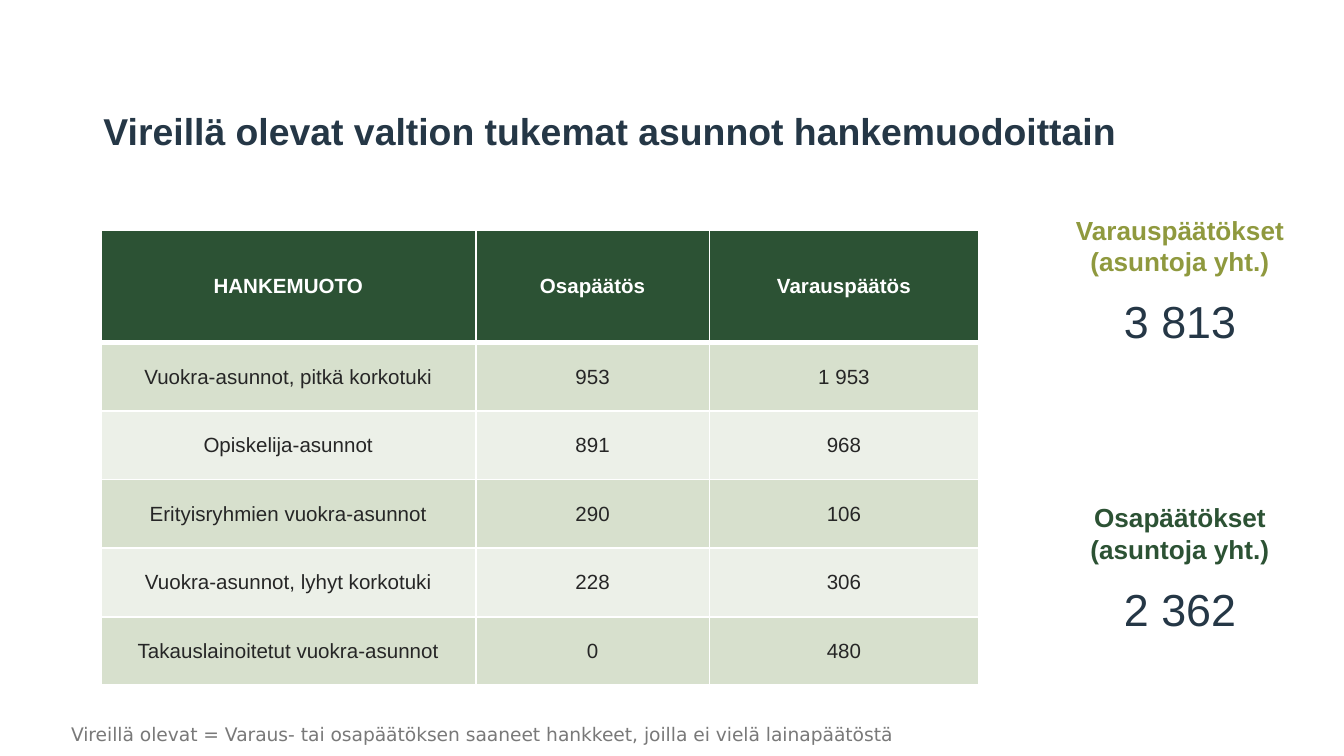
from dataclasses import dataclass

from lxml.etree import SubElement
from pptx import Presentation
from pptx.dml.color import RGBColor
from pptx.enum.text import MSO_ANCHOR as Anchor, MSO_AUTO_SIZE as AutoSize, PP_ALIGN as Align
from pptx.oxml.ns import qn
from pptx.util import Inches, Pt


@dataclass(frozen=True)
class Theme:
    """Colours, fonts and type sizes of the slide."""
    white: str = "FFFFFF"
    green: str = "2C5234"
    olive: str = "8F993E"
    navy: str = "253746"
    ink: str = "262626"
    grey: str = "797979"
    bands: tuple = ("D7E0CD", "ECF0E8")
    font: str = "Arial"
    note_font: str = "DejaVu Sans"
    title_size: int = 20
    table_size: int = 11
    label_size: int = 14
    figure_size: int = 24
    note_size: int = 10


THEME = Theme()
COLUMN_WIDTHS = (2.79, 1.74, 2)
HEADER_HEIGHT, ROW_HEIGHT = 0.84, 0.51
ROWS = (
    ("HANKEMUOTO", "Osapäätös", "Varauspäätös"),
    ("Vuokra-asunnot, pitkä korkotuki", "953", "1 953"),
    ("Opiskelija-asunnot", "891", "968"),
    ("Erityisryhmien vuokra-asunnot", "290", "106"),
    ("Vuokra-asunnot, lyhyt korkotuki", "228", "306"),
    ("Takauslainoitetut vuokra-asunnot", "0", "480"),
)
TOTALS = (
    ("Varauspäätökset", "3 813", THEME.olive, 1.54),
    ("Osapäätökset", "2 362", THEME.green, 3.68),
)


def style_runs(paragraph, size, color, bold=False, font=THEME.font):
    """Format every run of a paragraph."""
    for run in paragraph.runs:
        run.font.name = font
        run.font.size = Pt(size)
        run.font.bold = bold
        run.font.color.rgb = RGBColor.from_string(color)


def set_borders(cell, **widths):
    """Draw white cell borders, with widths in points by side letter."""
    properties = cell._tc.get_or_add_tcPr()
    for side, width in widths.items():
        line = SubElement(properties, qn(f"a:ln{side}"), w=str(Pt(width)))
        fill = SubElement(line, qn("a:solidFill"))
        SubElement(fill, qn("a:srgbClr"), val=THEME.white)


def add_title(slide, text):
    """Place and format the title placeholder."""
    title = slide.shapes.title
    title.left, title.top, title.width, title.height = map(Inches, (0.67, 0.78, 9.33, 0.38))
    text_frame = title.text_frame
    text_frame.text = text
    text_frame.vertical_anchor = Anchor.MIDDLE
    paragraph = text_frame.paragraphs[0]
    paragraph.alignment = Align.LEFT
    style_runs(paragraph, THEME.title_size, THEME.navy, bold=True)


def add_project_table(slide):
    """Add the banded table of project types."""
    height = HEADER_HEIGHT + ROW_HEIGHT * (len(ROWS) - 1)
    table = slide.shapes.add_table(
        len(ROWS), len(COLUMN_WIDTHS),
        Inches(0.75), Inches(1.71), Inches(sum(COLUMN_WIDTHS)), Inches(height),
    ).table
    for column, width in zip(table.columns, COLUMN_WIDTHS):
        column.width = Inches(width)
    for row_index, texts in enumerate(ROWS):
        header = row_index == 0
        table.rows[row_index].height = Inches(HEADER_HEIGHT if header else ROW_HEIGHT)
        fill = THEME.green if header else THEME.bands[(row_index - 1) % 2]
        for column_index, text in enumerate(texts):
            cell = table.cell(row_index, column_index)
            cell.text = text
            cell.vertical_anchor = Anchor.MIDDLE
            set_borders(cell, L=1, R=1, T=3 if row_index == 1 else 1, B=3 if header else 1)
            cell.fill.solid()
            cell.fill.fore_color.rgb = RGBColor.from_string(fill)
            paragraph = cell.text_frame.paragraphs[0]
            paragraph.alignment = Align.CENTER
            style_runs(paragraph, THEME.table_size, THEME.white if header else THEME.ink, header)


def add_text(slide, text, left, top, width, height):
    """Add a wrapping text box and return its text frame."""
    box = slide.shapes.add_textbox(*map(Inches, (left, top, width, height)))
    text_frame = box.text_frame
    text_frame.text = text
    text_frame.word_wrap = True
    text_frame.auto_size = AutoSize.SHAPE_TO_FIT_TEXT
    return text_frame


def add_total(slide, label, figure, color, top):
    """Add a two-line label with its total below."""
    text_frame = add_text(slide, f"{label}\n(asuntoja yht.)\n{figure}", 7.68, top, 2.2, 1.1)
    text_frame.vertical_anchor = Anchor.MIDDLE
    *label_paragraphs, figure_paragraph = text_frame.paragraphs
    for paragraph in text_frame.paragraphs:
        paragraph.alignment = Align.CENTER
    for paragraph in label_paragraphs:
        style_runs(paragraph, THEME.label_size, color, bold=True)
    figure_paragraph.space_before = Pt(9.3)
    style_runs(figure_paragraph, THEME.figure_size, THEME.navy)


def add_note(slide, text):
    """Add the explanatory note at the foot of the slide."""
    text_frame = add_text(slide, text, 0.43, 5.33, 9.25, 0.27)
    style_runs(text_frame.paragraphs[0], THEME.note_size, THEME.grey, font=THEME.note_font)


def main():
    """Build and save the presentation."""
    presentation = Presentation()
    presentation.slide_width = Inches(10)
    presentation.slide_height = Inches(10 * 9 / 16)
    slide = presentation.slides.add_slide(presentation.slide_layouts[5])
    add_title(slide, "Vireillä olevat valtion tukemat asunnot hankemuodoittain")
    add_project_table(slide)
    add_note(slide, "Vireillä olevat = Varaus- tai osapäätöksen saaneet hankkeet, "
                    "joilla ei vielä lainapäätöstä")
    for total in TOTALS:
        add_total(slide, *total)
    presentation.save("out.pptx")


if __name__ == "__main__":
    main()
